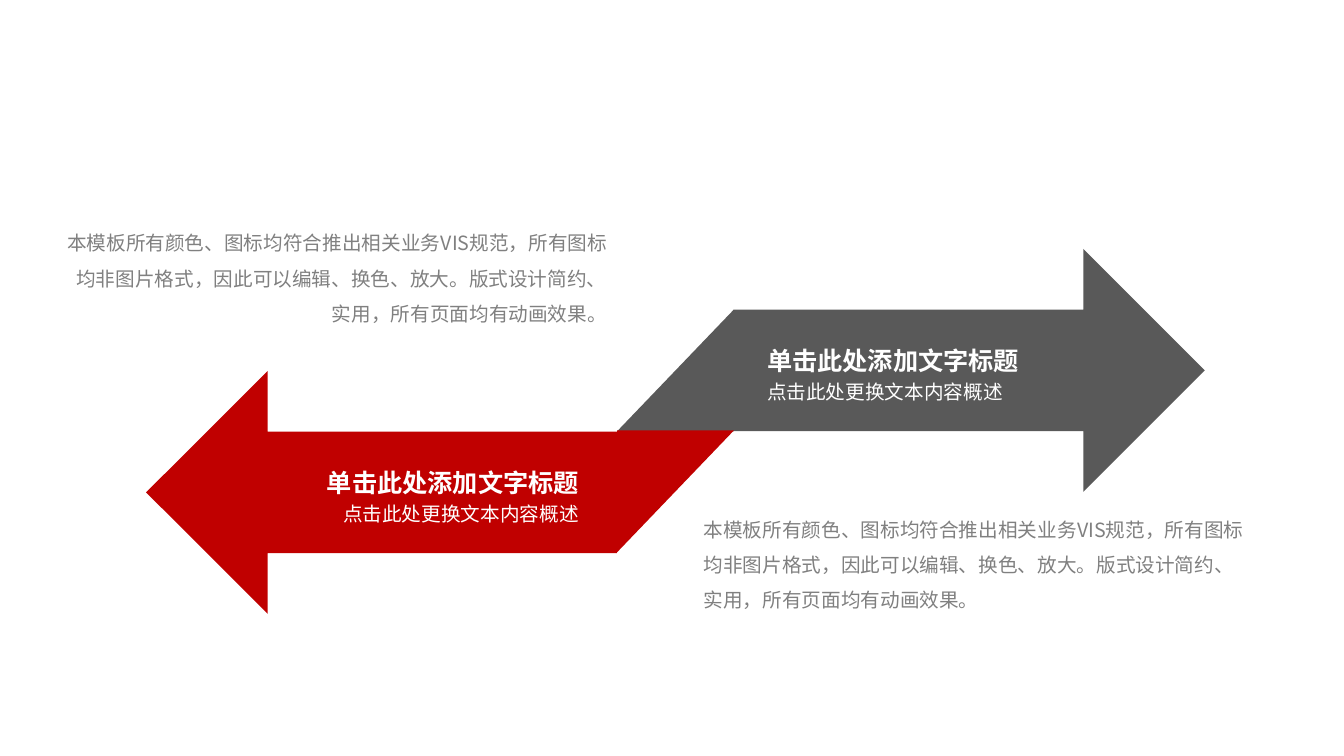
"""Build a slide with two opposing arrows and their descriptions."""
from lxml import etree
from pptx import Presentation
from pptx.dml.color import RGBColor
from pptx.enum import shapes, text
from pptx.oxml import ns
from pptx import util as u

PX = 9144
FONT = "Noto Sans CJK SC"
GREY = RGBColor(0x59, 0x59, 0x59)
RED = RGBColor(0xC0, 0x00, 0x00)
WHITE = RGBColor(0xFF, 0xFF, 0xFF)
BODY_GREY = RGBColor(0x80, 0x80, 0x80)
LEFT, RIGHT = text.PP_ALIGN.LEFT, text.PP_ALIGN.RIGHT
ARROW, TAIL = shapes.MSO_SHAPE.RIGHT_ARROW, shapes.MSO_SHAPE.RIGHT_TRIANGLE

HEADING = "单击此处添加文字标题"
SUMMARY = "点击此处更换文本内容概述"
DESCRIPTION = (
    "本模板所有颜色、图标均符合推出相关业务VIS规范，所有图标均非图片格式，"
    "因此可以编辑、换色、放大。版式设计简约、实用，所有页面均有动画效果。"
)


def emu(*lengths):
    return [u.Emu(length * PX) for length in lengths]


def add_block(parent, preset, box, color, flip=None):
    block = parent.add_shape(preset, *emu(*box))
    block.shadow.inherit = False
    block.fill.solid()
    block.fill.fore_color.rgb = color
    block.line.fill.background()
    if flip:
        block.element.spPr.xfrm.set(flip, "1")


def add_label(parent, box, words, size, color, align, spacing=None, bold=False):
    label = parent.add_textbox(*emu(*box))
    frame = label.text_frame
    frame.word_wrap = True
    paragraph = frame.paragraphs[0]
    paragraph.alignment = align
    if spacing:
        paragraph.line_spacing = spacing
    run = paragraph.add_run()
    run.text = words
    run.font.size = u.Pt(size)
    run.font.bold = bold
    run.font.color.rgb = color
    run.font.name = FONT
    properties = run.font._element
    properties.set("lang", "zh-CN")
    etree.SubElement(properties, ns.qn("a:ea"), typeface=FONT)
    return frame


def add_arrow(slide, left, top, tail_top, color, align, arrow_flip, tail_flip):
    arrow = slide.shapes.add_group_shape().shapes
    add_block(arrow, ARROW, (left, top, 467, 241), color, arrow_flip)
    add_block(arrow, TAIL, (612, tail_top, 116, 121), color, tail_flip)
    summary_left, heading_left = (751, 751) if align == LEFT else (269, 293)
    add_label(arrow, (summary_left, top + 125, 315, 35), SUMMARY, 14, WHITE, align)
    heading = add_label(arrow, (heading_left, top + 80, 291, 40), HEADING, 18,
                        WHITE, align, 1.7, True)
    heading.vertical_anchor = text.MSO_ANCHOR.MIDDLE


def add_description(slide, left, top, align):
    description = add_label(slide.shapes, (left, top, 561, 116), DESCRIPTION, 14,
                            BODY_GREY, align, 1.5)
    description.auto_size = text.MSO_AUTO_SIZE.SHAPE_TO_FIT_TEXT


def main():
    deck = Presentation()
    deck.slide_width, deck.slide_height = emu(1333, 750)
    slide = deck.slides.add_slide(deck.slide_layouts[6])
    add_arrow(slide, 728, 247, 307, GREY, LEFT, None, "flipH")
    add_arrow(slide, 145, 368, 427, RED, RIGHT, "flipH", "flipV")
    add_description(slide, 688, 497, LEFT)
    add_description(slide, 51, 213, RIGHT)
    deck.save("out.pptx")


if __name__ == "__main__":
    main()
